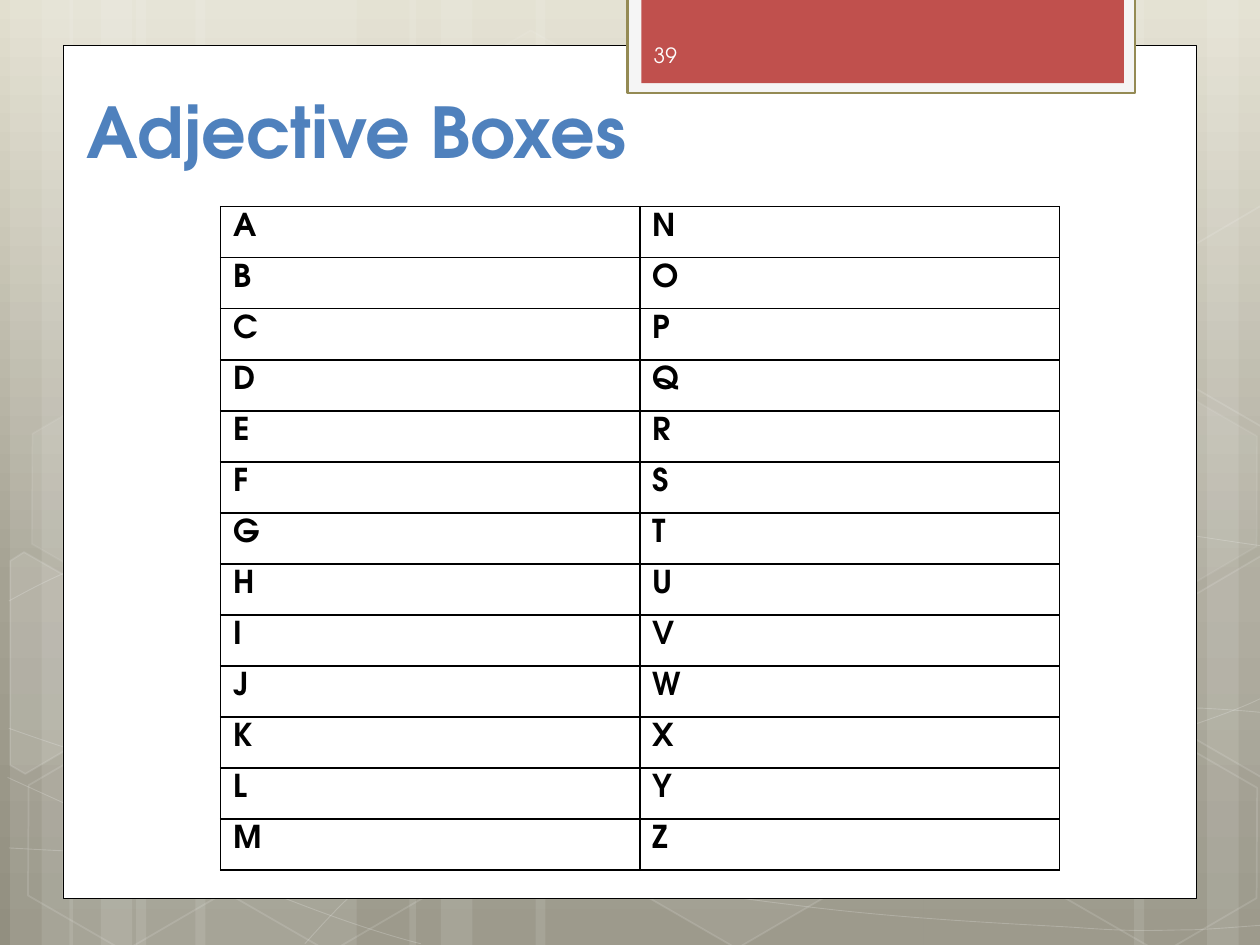
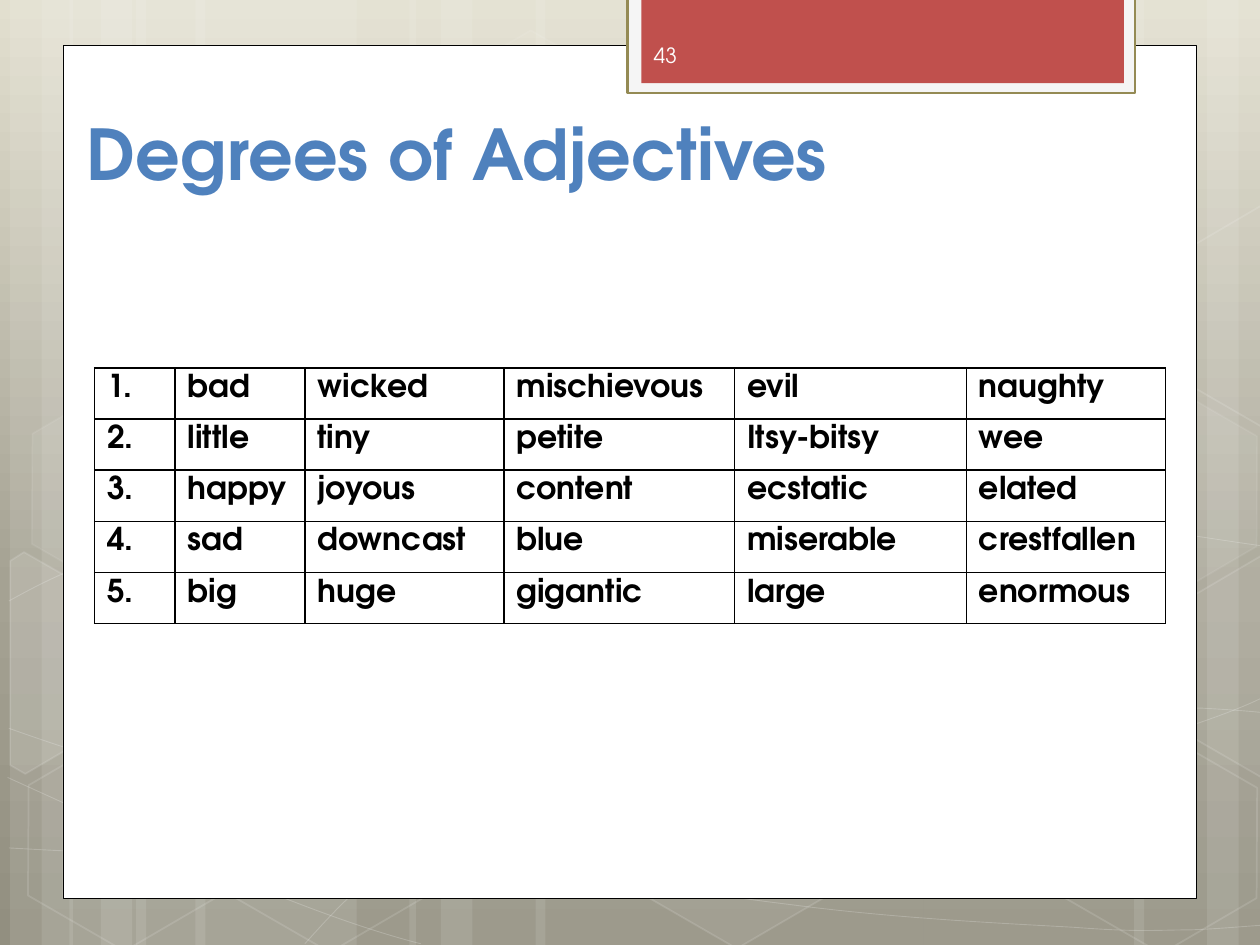
"""Build two adjective lesson slides with a shared backdrop, title style and table style."""
from math import cos, radians, sin
from lxml.etree import SubElement
from pptx import Presentation
from pptx.dml.color import RGBColor
from pptx.enum.shapes import MSO_SHAPE as SHAPE
from pptx.enum.text import MSO_ANCHOR as ANCHOR
from pptx.oxml.ns import qn
from pptx.util import Inches, Pt

FONT = "TeX Gyre Adventor"
COLORS = {
    "white": "FFFFFF", "black": "000000", "title": "4F81BD", "number": "FEFEFE",
    "tab": "C0504D", "tab_frame": "F5F5F5", "tab_edge": "948A54",
    "sky": "E2DFCF", "stone": "A5A293", "ground": "928F80",
}
GRADIENT = [("sky", 0), ("stone", 62), ("ground", 100)]
TILT = 30

# left, width, rotation
STRIPES = [(1.08, 1.75, 0), (0.08, 0.5, 0), (0.33, 0.83, 0), (1.55, 1.75, 0),
           (0.55, 0.5, 0), (0.8, 0.83, 0), (7.33, 1.75, 180), (9.58, 0.5, 180),
           (9, 0.83, 180), (4.25, 3.08, 0), (3.25, 0.5, 0), (3.5, 0.83, 0)]

CURVES = [
    [(0.07, 6.73), (0.61, 6.76), (1.15, 6.79), (1.9, 6.78), (2.65, 6.77), (3.58, 6.75),
     (4.58, 6.65), (5.58, 6.55), (7, 6.36), (7.92, 6.17), (8.83, 5.98), (9.77, 5.68),
     (10.07, 5.51)],
    [(0.07, 4.77), (0.36, 4.61), (0.65, 4.46), (1.21, 4.31), (1.78, 4.16), (2.59, 3.94),
     (3.47, 3.87), (4.36, 3.8), (5.44, 3.79), (6.54, 3.87), (7.64, 3.95), (9.47, 4.26),
     (10.07, 4.34)],
    [(0.06, 6.17), (1.27, 6.72), (2.47, 7.27), (3.34, 7.49)],
    [(0.07, 5.78), (0.38, 5.89), (0.7, 6), (1.28, 6.16), (1.86, 6.31), (2.73, 6.56),
     (3.57, 6.73), (4.4, 6.9), (5.45, 7.08), (6.28, 7.18), (7.11, 7.29), (8, 7.33),
     (8.53, 7.36), (9.05, 7.4), (9.19, 7.38), (9.45, 7.38), (9.71, 7.37), (9.89, 7.35),
     (10.07, 7.34)],
    [(2.42, 7.49), (2.6, 7.29), (2.78, 7.09), (3.02, 6.91), (3.26, 6.73), (3.6, 6.53),
     (3.88, 6.39), (4.16, 6.25), (4.33, 6.19), (4.7, 6.09), (5.06, 5.99), (5.73, 5.85),
     (6.08, 5.78), (6.44, 5.71), (6.49, 5.71), (6.8, 5.69), (7.11, 5.66), (7.6, 5.63),
     (7.94, 5.62), (8.29, 5.61), (8.86, 5.62), (9.53, 5.62), (9.71, 5.63), (9.88, 5.64),
     (10.06, 5.66)],
]

# left, top, fill opacity, line opacity
HEXAGONS = [(3.34, 0.36, 4, 8), (4.97, 5.89, 6, 12), (0.11, 5.91, None, 12),
            (0.14, 3.12, 7, 8), (1.74, 5.92, None, 12), (7.53, 4.53, 10, 12),
            (8.34, 5.93, None, 12), (8.34, 3.14, 7, 8)]

# tilted outline, centre, fill opacity
CUT_HEXAGONS = [
    ([(0.08, 4.45), (0.19, 4.38), (0.96, 4.82), (0.95, 5.7), (0.2, 6.14), (0.08, 6.07)],
     (0.36, 5.35), 10),
    ([(9.26, 4.85), (10.01, 4.41), (10.09, 4.46), (10.09, 6.13), (10.02, 6.17), (9.26, 5.73)],
     (9.85, 5.2), 4),
    ([(9.26, 2.07), (10.01, 1.63), (10.1, 1.68), (10.09, 3.35), (10.02, 3.39), (9.26, 2.95)],
     (9.85, 2.41), None),
]

DEGREES = [
    ["1.", "bad", "wicked", "mischievous", "evil", "naughty"],
    ["2.", "little", "tiny", "petite", "Itsy-bitsy", "wee"],
    ["3.", "happy", "joyous", "content", "ecstatic", "elated"],
    ["4.", "sad", "downcast", "blue", "miserable", "crestfallen"],
    ["5.", "big", "huge", "gigantic", "large", "enormous"],
]


def rgb(name):
    return RGBColor.from_string(COLORS[name])


def set_alpha(parent, percent):
    for color in parent.findall(qn("a:solidFill") + "/" + qn("a:srgbClr")):
        SubElement(color, qn("a:alpha"), val=str(percent * 1000))


def style(sp, fill=None, line=None, width=1, fill_alpha=100, line_alpha=100):
    sp.shadow.inherit = False
    spPr = sp._element.spPr
    if fill:
        sp.fill.solid()
        sp.fill.fore_color.rgb = rgb(fill)
        if fill_alpha < 100:
            set_alpha(spPr, fill_alpha)
    else:
        sp.fill.background()
    if line:
        sp.line.color.rgb = rgb(line)
        sp.line.width = Pt(width)
        if line_alpha < 100:
            set_alpha(spPr.find(qn("a:ln")), line_alpha)
    else:
        sp.line.fill.background()


def add_preset(s, kind, box, rotation=0, **look):
    sp = s.shapes.add_shape(kind, *map(Inches, box))
    sp.rotation = rotation
    style(sp, **look)
    return sp


def add_outline(s, points, close, **look):
    emu = [(Inches(x), Inches(y)) for x, y in points]
    builder = s.shapes.build_freeform(*emu[0])
    builder.add_line_segments(emu[1:], close=close)
    sp = builder.convert_to_shape()
    style(sp, **look)
    return sp


def add_curve(s, points, **look):
    sp = add_outline(s, points, False, **look)
    outline = next(sp._element.iter(qn("a:path")))
    segments = outline.findall(qn("a:lnTo"))
    for i in range(0, len(segments), 3):
        bezier = SubElement(outline, qn("a:cubicBezTo"))
        for segment in segments[i:i + 3]:
            bezier.append(segment[0])
            outline.remove(segment)


def turn_back(point, center):
    dx, dy = point[0] - center[0], point[1] - center[1]
    c, k = cos(radians(TILT)), sin(radians(TILT))
    return center[0] + dx * c + dy * k, center[1] - dx * k + dy * c


def glass(fill_alpha, line_alpha=12):
    look = dict(line="white", line_alpha=line_alpha)
    return dict(look, fill="white", fill_alpha=fill_alpha) if fill_alpha else look


def add_gradient(s):
    fill = s.background.fill
    fill.gradient()
    fill.gradient_angle = 270
    stops = next(s._element.iter(qn("a:gsLst")))
    for stop in list(stops):
        stops.remove(stop)
    for name, percent in GRADIENT:
        stop = SubElement(stops, qn("a:gs"), pos=str(percent * 1000))
        SubElement(stop, qn("a:srgbClr"), val=COLORS[name])


def add_backdrop(s):
    add_gradient(s)
    for left, width, rotation in STRIPES:
        add_preset(s, SHAPE.RECTANGLE, (left, 0, width, 7.5), rotation,
                   fill="white", fill_alpha=10)
    for points in CURVES:
        add_curve(s, points, line="white", width=0.5, line_alpha=20)
    for left, top, fill_alpha, line_alpha in HEXAGONS:
        sp = add_preset(s, SHAPE.HEXAGON, (left, top, 1.75, 1.52), TILT,
                        **glass(fill_alpha, line_alpha))
        sp.adjustments[0] = 0.285
    for points, center, fill_alpha in CUT_HEXAGONS:
        upright = [turn_back(point, center) for point in points]
        add_outline(s, upright, True, **glass(fill_alpha)).rotation = TILT
    add_preset(s, SHAPE.RECTANGLE, (0.5, 0.36, 9, 6.77), fill="white", line="black", width=0.5)
    add_preset(s, SHAPE.RECTANGLE, (4.98, -0.02, 4.03, 0.76),
               fill="tab_frame", line="tab_edge", width=1.25)
    add_preset(s, SHAPE.RECTANGLE, (5.09, -0.02, 3.83, 0.68), fill="tab")


def set_text(tf, text, size, color, bold=False):
    p = tf.paragraphs[0]
    p.text = text
    p.font.name = FONT
    p.font.size = Pt(size)
    p.font.bold = bold
    p.font.color.rgb = rgb(color)


def add_text(s, box, text, size, color, anchor, bold=False):
    tf = s.shapes.add_textbox(*map(Inches, box)).text_frame
    tf.word_wrap = True
    tf.vertical_anchor = anchor
    set_text(tf, text, size, color, bold)


def add_borders(cell):
    tcPr = cell._tc.get_or_add_tcPr()
    for side in ("lnL", "lnR", "lnT", "lnB"):
        ln = SubElement(tcPr, qn("a:" + side), w=str(Pt(1)))
        SubElement(SubElement(ln, qn("a:solidFill")), qn("a:srgbClr"), val=COLORS["black"])


def add_word_table(s, left, top, height, widths, rows):
    frame = s.shapes.add_table(len(rows), len(widths), Inches(left), Inches(top),
                               Inches(sum(widths)), Inches(height))
    table = frame.table
    table.first_row = table.horz_banding = False
    for column, width in zip(table.columns, widths):
        column.width = Inches(width)
    for r, words in enumerate(rows):
        for c, word in enumerate(words):
            cell = table.cell(r, c)
            add_borders(cell)
            cell.fill.background()
            set_text(cell.text_frame, word, 18, "black", bold=True)


def add_lesson_slide(prs, title, title_top, number):
    s = prs.slides.add_slide(prs.slide_layouts[6])
    add_backdrop(s)
    add_text(s, (0.59, title_top, 8.24, 1.25), title, 40, "title", ANCHOR.BOTTOM, bold=True)
    add_text(s, (5.09, 0.24, 1.46, 0.4), number, 12, "number", ANCHOR.MIDDLE)
    return s


def main():
    prs = Presentation()
    prs.slide_width, prs.slide_height = Inches(10), Inches(7.5)

    s = add_lesson_slide(prs, "Adjective Boxes", 0.17, "39")
    letters = list(zip("ABCDEFGHIJKLM", "NOPQRSTUVWXYZ"))
    add_word_table(s, 1.75, 1.64, 5.27, [3.33, 3.33], letters)

    s = add_lesson_slide(prs, "Degrees of Adjectives", 0.34, "43")
    add_word_table(s, 0.75, 2.92, 2.03, [0.64, 1.03, 1.58, 1.83, 1.84, 1.58], DEGREES)

    prs.save("out.pptx")


if __name__ == "__main__":
    main()
